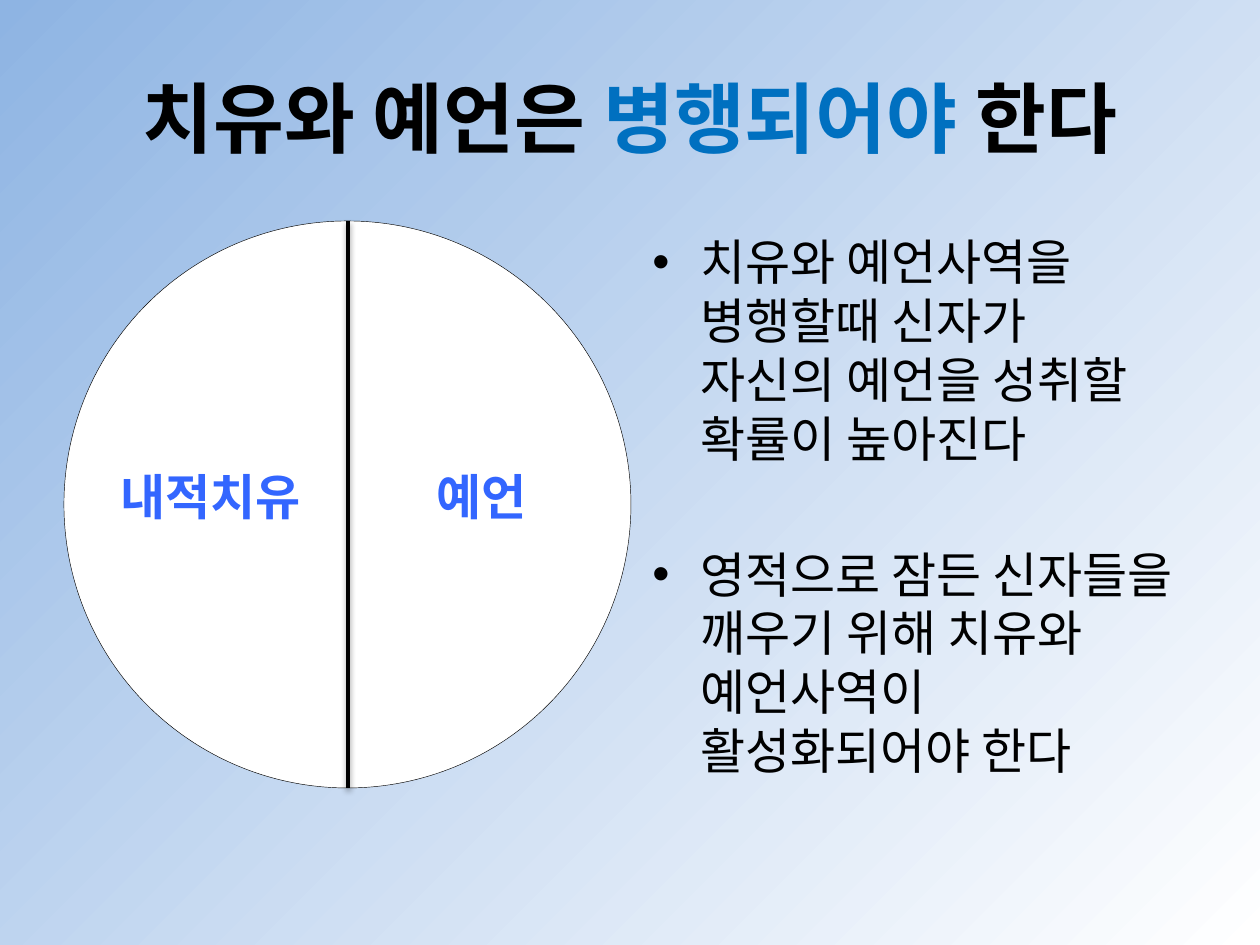
from lxml.etree import SubElement
from pptx import Presentation
from pptx.dml.color import RGBColor
from pptx.enum.shapes import MSO_CONNECTOR, MSO_SHAPE
from pptx.enum.text import MSO_ANCHOR, PP_ALIGN
from pptx.oxml.ns import qn
from pptx.util import Emu, Pt

FONT = "Noto Sans CJK KR"
C = {"black": "000000", "white": "FFFFFF", "sky": "8EB4E3",
     "accent": "0070C0", "label": "3366FF"}


def px(n):
    return Emu(round(n * 914400 / 126))


def add_run(p, text, size, color, bold=False):
    r = p.add_run()
    r.text = text
    r.font.size, r.font.bold, r.font.name = Pt(size), bold, FONT
    r.font.color.rgb = RGBColor.from_string(C[color])
    SubElement(r.font._element, qn("a:ea"), typeface=FONT)


prs = Presentation()
prs.slide_width, prs.slide_height = px(1260), px(945)
s = prs.slides.add_slide(prs.slide_layouts[6])

# Background: radial gradient from the bottom right corner
fill = s.background.fill
fill.gradient()
for stop, color in zip(fill.gradient_stops, ("white", "sky")):
    stop.color.rgb = RGBColor.from_string(C[color])
grad = s.background._cSld.find(".//" + qn("a:gradFill"))
grad.remove(grad.find(qn("a:lin")))
radial = SubElement(grad, qn("a:path"), path="circle")
SubElement(radial, qn("a:fillToRect"), l="100000", t="100000")

# Title
tf = s.shapes.add_textbox(px(63), px(38), px(1134), px(157)).text_frame
tf.word_wrap = True
tf.vertical_anchor = MSO_ANCHOR.MIDDLE
p = tf.paragraphs[0]
p.alignment = PP_ALIGN.CENTER
for text, color in (("치유와 예언은 ", "black"), ("병행되어야 ", "accent"),
                    ("한다", "black")):
    add_run(p, text, 44, color, True)

# Bulleted body
points = [
    ["치유와 예언사역을 ", "병행할때 신자가 ", "자신의 예언을 성취할 ", "확률이 높아진다"],
    ["영적으로 잠든 신자들을 깨우기 위해 치유와 ", "예언사역이 ", "활성화되어야 한다"],
]
tf = s.shapes.add_textbox(px(640), px(221), px(583), px(624)).text_frame
tf.word_wrap = True
tf.margin_top = px(11)
for i, lines in enumerate(points):
    p = tf.add_paragraph() if i else tf.paragraphs[0]
    p.line_spacing = Pt(33.6)
    p.space_before = Pt(44 if i else 0)
    pPr = p._p.get_or_add_pPr()
    pPr.set("marL", str(px(48)))
    pPr.set("indent", str(-px(48)))
    SubElement(pPr, qn("a:buFont"), typeface="Arial")
    SubElement(pPr, qn("a:buChar"), char="•")
    for j, line in enumerate(lines):
        if j:
            p.add_line_break()
        add_run(p, line, 28, "black")

# Circle
sp = s.shapes.add_shape(MSO_SHAPE.OVAL, px(64), px(221), px(567), px(567))
sp.shadow.inherit = False
sp.fill.solid()
sp.fill.fore_color.rgb = RGBColor.from_string(C["white"])
sp.line.color.rgb = RGBColor.from_string(C["black"])
sp.line.width = Pt(0.25)

# Dividing line with a soft shadow
line = s.shapes.add_connector(MSO_CONNECTOR.STRAIGHT,
                              px(348), px(221), px(348), px(788))
line.line.color.rgb = RGBColor.from_string(C["black"])
line.line.width = Pt(2)
effects = SubElement(line._element.spPr, qn("a:effectLst"))
shadow = SubElement(effects, qn("a:outerShdw"), blurRad=str(Pt(3.1)),
                    dist=str(Pt(1.6)), dir="5400000", rotWithShape="0")
shade = SubElement(shadow, qn("a:srgbClr"), val=C["black"])
SubElement(shade, qn("a:alpha"), val="38000")

# Labels of the two halves
for x, text in ((77, "내적치유"), (348, "예언")):
    tf = s.shapes.add_textbox(px(x), px(384), px(267), px(223)).text_frame
    tf.word_wrap = True
    tf.vertical_anchor = MSO_ANCHOR.MIDDLE
    p = tf.paragraphs[0]
    p.alignment = PP_ALIGN.CENTER
    add_run(p, text, 28, "label", True)

prs.save("out.pptx")
